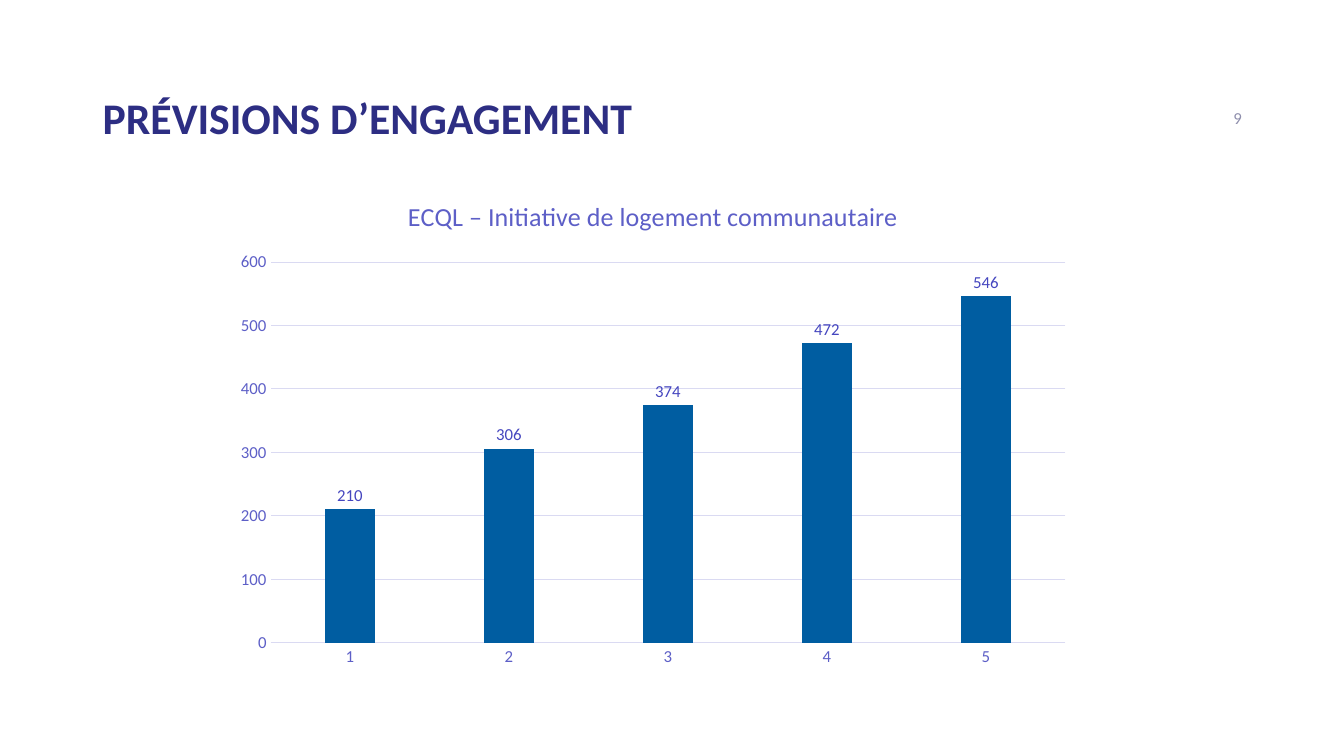
from pptx import Presentation
from pptx.chart.data import CategoryChartData
from pptx.dml.color import RGBColor
from pptx.enum.chart import XL_CHART_TYPE, XL_LABEL_POSITION, XL_TICK_MARK
from pptx.enum.text import MSO_ANCHOR, PP_ALIGN
from pptx.util import Cm, Pt

COLUMNS = XL_CHART_TYPE.COLUMN_CLUSTERED
OUTSIDE_END = XL_LABEL_POSITION.OUTSIDE_END
NO_TICK = XL_TICK_MARK.NONE
MIDDLE, BOTTOM = MSO_ANCHOR.MIDDLE, MSO_ANCHOR.BOTTOM
LEFT, RIGHT = PP_ALIGN.LEFT, PP_ALIGN.RIGHT

FONT = "Calibri"
NAVY, BLUE, GRAY = "2D2E83", "005DA1", "8F8FAD"
AXIS_TEXT, LABEL_TEXT, GRID = "5D5FC7", "4546BF", "DADAF2"
COMMITMENTS = {"1": 210, "2": 306, "3": 374, "4": 472, "5": 546}


def color(hex_string):
    """Turn a hex string into a colour."""
    return RGBColor.from_string(hex_string)


def set_font(font, size, hex_string, bold=False):
    """Set the face, size, colour and weight of a font."""
    font.name = FONT
    font.size = Pt(size)
    font.bold = bold
    font.color.rgb = color(hex_string)


def set_line(line, hex_string):
    """Give a chart line its colour and width."""
    line.color.rgb = color(hex_string)
    line.width = Pt(0.75)


def add_text(slide, box, text, size, hex_string, bold=False, align=LEFT, anchor=MIDDLE):
    """Place one line of text in the box and return its paragraph."""
    frame = slide.shapes.add_textbox(*box).text_frame
    frame.word_wrap = True
    frame.vertical_anchor = anchor
    paragraph = frame.paragraphs[0]
    paragraph.text = text
    paragraph.alignment = align
    set_font(paragraph.font, size, hex_string, bold)
    return paragraph


def add_header(slide, left, top, width):
    """Place the slide title and, at the right, the slide number."""
    title_box = (left, top, width, Cm(1.52))
    title = add_text(slide, title_box, "PRÉVISIONS D’ENGAGEMENT", 31.2, NAVY, True, anchor=BOTTOM)
    title.line_spacing = 0.9
    number_width = Cm(7.62)
    number_box = (left + width - number_width, top + Cm(0.22), number_width, Cm(1.02))
    add_text(slide, number_box, "9", 12, GRAY, align=RIGHT)


def add_commitment_chart(slide, box):
    """Place the column chart of commitments in the box."""
    data = CategoryChartData()
    data.categories = list(COMMITMENTS)
    data.add_series("Series 1", list(COMMITMENTS.values()))
    chart = slide.shapes.add_chart(COLUMNS, *box, data).chart
    set_font(chart.font, 10, NAVY)
    chart.has_legend = False
    chart.has_title = True
    title = chart.chart_title.text_frame.paragraphs[0]
    title.text = "ECQL – Initiative de logement communautaire"
    set_font(title.font, 18.6, AXIS_TEXT)

    for axis in (chart.category_axis, chart.value_axis):
        axis.major_tick_mark = axis.minor_tick_mark = NO_TICK
        set_font(axis.tick_labels.font, 12, AXIS_TEXT)
    set_line(chart.category_axis.format.line, GRID)
    chart.value_axis.format.line.fill.background()
    set_line(chart.value_axis.major_gridlines.format.line, GRID)
    chart.value_axis.minimum_scale = 0
    chart.value_axis.maximum_scale = 600
    chart.value_axis.major_unit = 100

    plot = chart.plots[0]
    plot.vary_by_categories = False
    plot.gap_width = 219
    plot.overlap = -27
    series = plot.series[0]
    series.format.fill.solid()
    series.format.fill.fore_color.rgb = color(BLUE)
    labels = series.data_labels
    labels.show_value = True
    labels.position = OUTSIDE_END
    set_font(labels.font, 12, LABEL_TEXT)


def main():
    """Build the slide and save it."""
    presentation = Presentation()
    presentation.slide_width = Cm(33.87)
    presentation.slide_height = Cm(19.05)
    slide = presentation.slides.add_slide(presentation.slide_layouts[6])
    add_commitment_chart(slide, (Cm(5.64), Cm(4.5), Cm(21.64), Cm(12.55)))
    add_header(slide, Cm(2.34), Cm(2.24), Cm(29.21))
    presentation.save("out.pptx")


if __name__ == "__main__":
    main()
